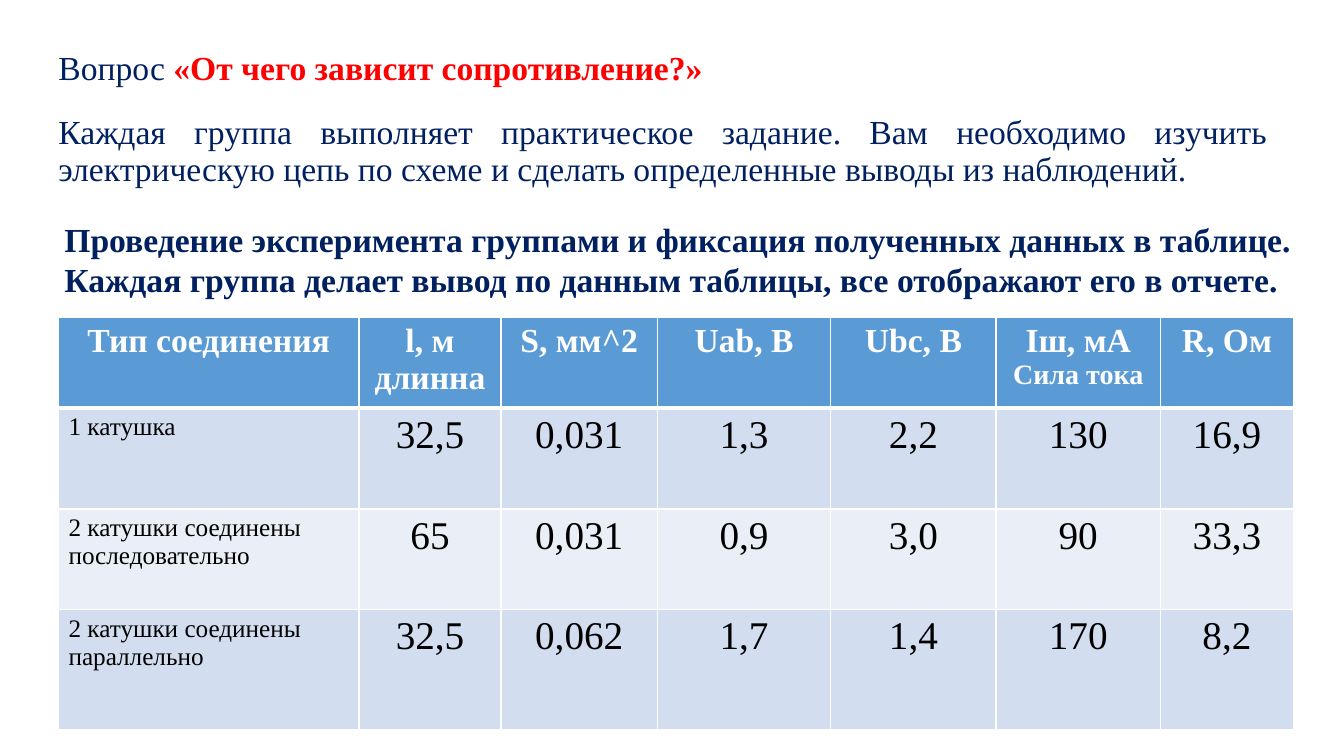
from dataclasses import dataclass

from pptx import Presentation
from pptx.dml.color import RGBColor
from pptx.enum.text import MSO_AUTO_SIZE, PP_ALIGN
from pptx.oxml.ns import qn
from pptx.util import Inches, Pt
from lxml import etree

LEFT, CENTER, JUSTIFY = PP_ALIGN.LEFT, PP_ALIGN.CENTER, PP_ALIGN.JUSTIFY
FIT_SHAPE = MSO_AUTO_SIZE.SHAPE_TO_FIT_TEXT
FONT = "Times New Roman"
COLORS = {
    "navy": "002060",
    "red": "FF0000",
    "white": "FFFFFF",
    "black": "000000",
    "header": "5B9BD5",
    "odd": "D2DEEF",
    "even": "EAEFF7",
}


@dataclass(frozen=True)
class Span:
    text: str
    color: str = "navy"
    size: int = 24
    bold: bool = False


@dataclass(frozen=True)
class Para:
    spans: tuple[Span, ...]
    align: PP_ALIGN = LEFT


@dataclass(frozen=True)
class Statement:
    left: float
    top: float
    width: float
    height: float
    para: Para


STATEMENTS = [
    Statement(0.46, 0.5, 12.11, 0.4, Para((
        Span("Вопрос "),
        Span("«От чего зависит сопротивление?»", "red", bold=True),
    ))),
    Statement(0.46, 1.14, 12.23, 0.91, Para((
        Span("Каждая группа выполняет практическое задание. Вам необходимо изучить "
             "электрическую цепь по схеме и сделать определенные выводы из наблюдений."),
    ), JUSTIFY)),
]
INSTRUCTIONS = [
    "Проведение эксперимента группами и фиксация полученных данных в таблице.",
    "Каждая группа делает вывод по данным таблицы, все отображают его в отчете.",
]
COLUMN_WIDTHS = [2.98, 1.41, 1.55, 1.72, 1.64, 1.63, 1.32]
ROW_HEIGHTS = [0.89, 1.0, 1.0, 1.19]
HEADERS = [
    [("Тип соединения", 24)],
    [("l, м", 24), ("длинна", 24)],
    [("S, мм^2", 24)],
    [("Uab, В", 24)],
    [("Ubc, В", 24)],
    [("Iш, мА", 24), ("Сила тока", 20)],
    [("R, Ом", 24)],
]
MEASUREMENTS = [
    ["1 катушка", "32,5", "0,031", "1,3", "2,2", "130", "16,9"],
    ["2 катушки соединены последовательно", "65", "0,031", "0,9", "3,0", "90", "33,3"],
    ["2 катушки соединены параллельно", "32,5", "0,062", "1,7", "1,4", "170", "8,2"],
]


def write(frame, paras: list[Para]) -> None:
    for index, content in enumerate(paras):
        para = frame.add_paragraph() if index else frame.paragraphs[0]
        para.alignment = content.align
        for span in content.spans:
            run = para.add_run()
            run.text = span.text
            run.font.name = FONT
            run.font.size = Pt(span.size)
            run.font.bold = span.bold
            run.font.color.rgb = RGBColor.from_string(COLORS[span.color])


def add_grid(slide, left: float, top: float, widths: list[float], heights: list[float]):
    table = slide.shapes.add_table(
        len(heights), len(widths), Inches(left), Inches(top),
        Inches(sum(widths)), Inches(sum(heights))).table
    table.first_row = table.horz_banding = False
    for column, width in zip(table.columns, widths):
        column.width = Inches(width)
    for row, height in zip(table.rows, heights):
        row.height = Inches(height)
    return table


def set_borders(cell, top: int, bottom: int) -> None:
    properties = cell._tc.get_or_add_tcPr()
    for side, points in (("L", 1), ("R", 1), ("T", top), ("B", bottom)):
        line = etree.SubElement(properties, qn(f"a:ln{side}"), w=str(Pt(points)))
        fill = etree.SubElement(line, qn("a:solidFill"))
        etree.SubElement(fill, qn("a:srgbClr"), val=COLORS["white"])


def add_statement(slide, statement: Statement) -> None:
    table = add_grid(slide, statement.left, statement.top,
                     [statement.width], [statement.height])
    cell = table.cell(0, 0)
    cell.margin_left = cell.margin_right = Inches(0.12)
    cell.margin_top = cell.margin_bottom = 0
    for side in "LRTB":
        line = etree.SubElement(cell._tc.get_or_add_tcPr(), qn(f"a:ln{side}"))
        etree.SubElement(line, qn("a:noFill"))
    cell.fill.background()
    write(cell.text_frame, [statement.para])


def add_instructions(slide) -> None:
    box = slide.shapes.add_textbox(Inches(0.54), Inches(2.12), Inches(12.58), Inches(0.91))
    box.text_frame.word_wrap = False
    box.text_frame.auto_size = FIT_SHAPE
    write(box.text_frame, [Para((Span(text, bold=True),)) for text in INSTRUCTIONS])


def measurement_para(column: int, text: str) -> Para:
    if column == 0:
        return Para((Span(text, "black", 18),))
    return Para((Span(text, "black", 28),), CENTER)


def add_measurements(slide) -> None:
    table = add_grid(slide, 0.58, 3.15, COLUMN_WIDTHS, ROW_HEIGHTS)
    header = [[Para((Span(text, "white", size, True),), CENTER) for text, size in lines]
              for lines in HEADERS]
    body = [[[measurement_para(column, text)] for column, text in enumerate(values)]
            for values in MEASUREMENTS]
    for row, contents in enumerate([header, *body]):
        shade = "header" if row == 0 else "odd" if row % 2 else "even"
        for column, paras in enumerate(contents):
            cell = table.cell(row, column)
            set_borders(cell, 3 if row == 1 else 1, 3 if row == 0 else 1)
            cell.fill.solid()
            cell.fill.fore_color.rgb = RGBColor.from_string(COLORS[shade])
            write(cell.text_frame, paras)


def main() -> None:
    deck = Presentation()
    deck.slide_width, deck.slide_height = Inches(13.33), Inches(7.5)
    page = deck.slides.add_slide(deck.slide_layouts[6])
    for statement in STATEMENTS:
        add_statement(page, statement)
    add_instructions(page)
    add_measurements(page)
    deck.save("out.pptx")


if __name__ == "__main__":
    main()
